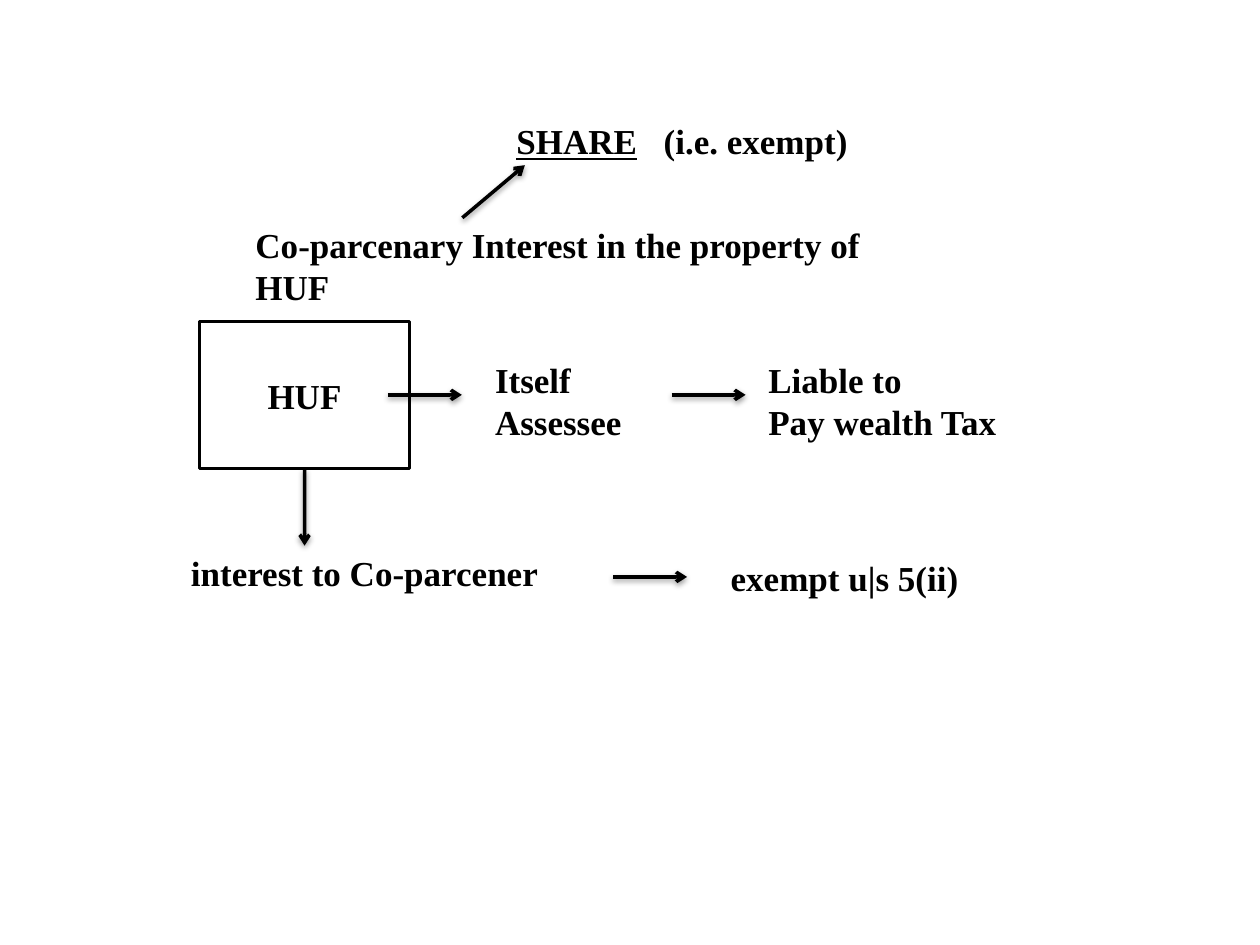
import pptx
import pptx.util
import pptx.dml.color
import pptx.enum.shapes
import pptx.enum.text
import pptx.oxml.ns
import lxml.etree

Cm = pptx.util.Cm
Pt = pptx.util.Pt

COLORS = {"ink": "000000", "paper": "FFFFFF"}
FONT = "Times New Roman"
FONT_SIZE = Pt(20)
LINE_WIDTH = Pt(2)
LINE_HEIGHT = 0.84
PADDING = 0.28

# Lines of text, left, top, width (cm), underlined
LABELS = [
    (["Co-parcenary Interest in the property of HUF"], 4.9, 4.39, 14.35, False),
    (["SHARE"], 10.16, 2.29, 3.18, True),
    (["(i.e. exempt)"], 13.13, 2.29, 5.92, False),
    (["Itself", "Assessee"], 9.73, 7.11, 3.18, False),
    (["Liable to", "Pay wealth Tax"], 15.24, 7.11, 5.72, False),
    (["interest to Co-parcener"], 3.6, 11, 7.82, False),
    (["exempt u|s 5(ii)"], 14.48, 11.1, 5.41, False),
]
FAMILY_BOX = ("HUF", 4.02, 6.48, 4.24, 2.97)

# Start and end points (cm)
ARROWS = [
    ((9.32, 4.39), (10.58, 3.33)),
    ((7.82, 7.96), (9.31, 7.96)),
    ((13.54, 7.96), (15.03, 7.96)),
    ((12.36, 11.63), (13.85, 11.63)),
]
DOWN_ARROW = ((6.14, 9.45), (6.14, 11))


def color(name):
    return pptx.dml.color.RGBColor.from_string(COLORS[name])


def write_lines(text_frame, lines, alignment, underline=False):
    for index, line in enumerate(lines):
        paragraph = text_frame.add_paragraph() if index else text_frame.paragraphs[0]
        paragraph.alignment = alignment
        run = paragraph.add_run()
        run.text = line
        run.font.name = FONT
        run.font.size = FONT_SIZE
        run.font.bold = True
        if underline:
            run.font.underline = True
        run.font.color.rgb = color("ink")


def add_label(slide, lines, left, top, width, underline):
    height = PADDING + LINE_HEIGHT * len(lines)
    shape = slide.shapes.add_textbox(Cm(left), Cm(top), Cm(width), Cm(height))
    shape.text_frame.word_wrap = True
    shape.text_frame.auto_size = pptx.enum.text.MSO_AUTO_SIZE.SHAPE_TO_FIT_TEXT
    write_lines(shape.text_frame, lines, pptx.enum.text.PP_ALIGN.LEFT, underline)


def add_box(slide, text, left, top, width, height):
    shape = slide.shapes.add_shape(
        pptx.enum.shapes.MSO_SHAPE.FLOWCHART_PROCESS,
        Cm(left), Cm(top), Cm(width), Cm(height))
    shape.shadow.inherit = False
    shape.fill.solid()
    shape.fill.fore_color.rgb = color("paper")
    shape.line.color.rgb = color("ink")
    shape.line.width = LINE_WIDTH
    shape.text_frame.vertical_anchor = pptx.enum.text.MSO_ANCHOR.MIDDLE
    write_lines(shape.text_frame, [text], pptx.enum.text.PP_ALIGN.CENTER)
    return shape


def add_arrow(slide, start, end):
    """Add an arrow that keeps the soft shadow of the theme."""
    connector = slide.shapes.add_connector(
        pptx.enum.shapes.MSO_CONNECTOR.STRAIGHT,
        *(Cm(value) for value in start + end))
    connector.line.color.rgb = color("ink")
    connector.line.width = LINE_WIDTH
    line = connector.line._get_or_add_ln()
    lxml.etree.SubElement(line, pptx.oxml.ns.qn("a:tailEnd"), type="arrow")
    return connector


def main():
    presentation = pptx.Presentation()
    presentation.slide_width = Cm(25.4)
    presentation.slide_height = Cm(19.05)
    slide = presentation.slides.add_slide(presentation.slide_layouts[6])

    box = add_box(slide, *FAMILY_BOX)
    for label in LABELS:
        add_label(slide, *label)
    for start, end in ARROWS:
        add_arrow(slide, start, end)
    add_arrow(slide, *DOWN_ARROW).begin_connect(box, 2)

    presentation.save("out.pptx")


if __name__ == "__main__":
    main()
